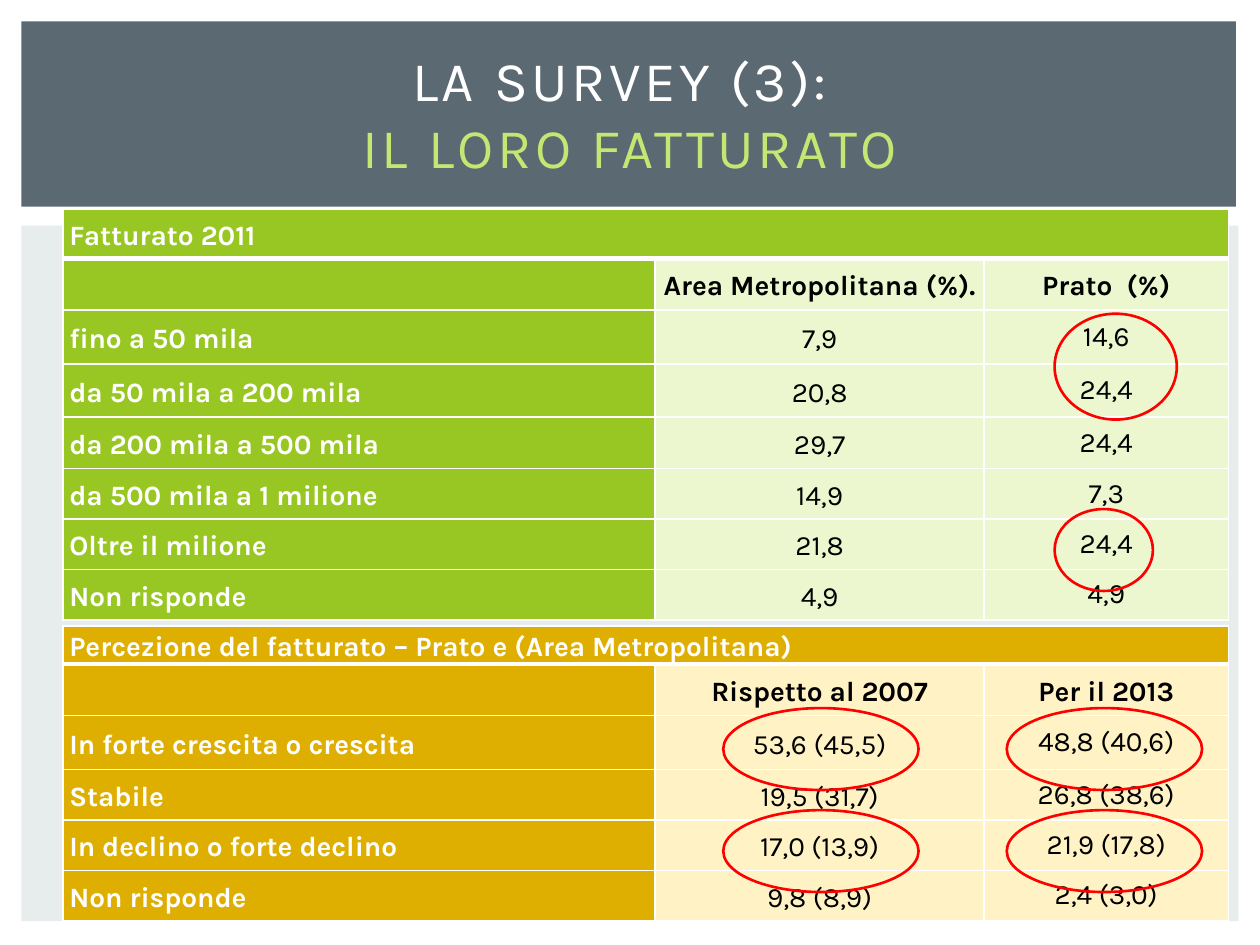
"""Build the survey slide with two turnover tables and highlighted figures."""
from lxml.etree import SubElement
from pptx import Presentation
from pptx.dml.color import RGBColor
from pptx.enum.shapes import MSO_SHAPE as Preset
from pptx.enum.text import MSO_ANCHOR as Anchor, PP_ALIGN as Align
from pptx.oxml.ns import qn
from pptx.util import Inches, Pt

FONT = "Karla"
WHITE, BLACK, RED = "FFFFFF", "000000", "FF0000"
COLUMN_WIDTHS = [4.7, 2.61, 1.94]


def color(value):
    return RGBColor.from_string(value)


def add_run(paragraph, text, size, text_color, bold=False):
    run = paragraph.add_run()
    run.text = text
    run.font.name = FONT
    run.font.size = Pt(size)
    run.font.bold = bold
    run.font.color.rgb = color(text_color)
    return run


presentation = Presentation()
presentation.slide_width = Inches(10)
presentation.slide_height = Inches(7.5)
slide = presentation.slides.add_slide(presentation.slide_layouts[5])
shapes = slide.shapes

panels = [
    (0.17, 1.79, 9.66, 5.52, "E7ECED"),
    (0.17, 0.17, 9.64, 1.47, "5B6973"),
]
for left, top, width, height, fill in panels:
    panel = shapes.add_shape(Preset.RECTANGLE, Inches(left), Inches(top), Inches(width), Inches(height))
    panel.shadow.inherit = False
    panel.fill.solid()
    panel.fill.fore_color.rgb = color(fill)
    panel.line.fill.background()

title = shapes.title
title.left, title.top, title.width, title.height = Inches(0.5), Inches(0.3), Inches(9), Inches(1.19)
title.element.getparent().append(title.element)
title.text_frame.vertical_anchor = Anchor.MIDDLE
title.text_frame.word_wrap = True
title_paragraph = title.text_frame.paragraphs[0]
title_paragraph.alignment = Align.CENTER
first_line = add_run(title_paragraph, "LA SURVEY (3): ", 32, WHITE)
title_paragraph.add_line_break()
second_line = add_run(title_paragraph, "IL LORO FATTURATO", 32, "C5E672")
for run in (first_line, second_line):
    run.font._element.set("spc", "200")

turnover = [
    ["Fatturato 2011", "", ""],
    ["", "Area Metropolitana (%).", "Prato  (%)"],
    ["fino a 50 mila", "7,9", "14,6"],
    ["da 50 mila a 200 mila", "20,8", "24,4"],
    ["da 200 mila a 500 mila", "29,7", "24,4"],
    ["da 500 mila a 1 milione", "14,9", "7,3"],
    ["Oltre il milione", "21,8", "24,4"],
    ["Non risponde", "4,9", "4,9"],
]
perception = [
    ["Percezione del fatturato – Prato e (Area Metropolitana)", "", ""],
    ["", "Rispetto al 2007", "Per il 2013"],
    ["In forte crescita o crescita", "53,6 (45,5)", "48,8 (40,6)"],
    ["Stabile", "19,5 (31,7)", "26,8 (38,6)"],
    ["In declino o forte declino", "17,0 (13,9)", "21,9 (17,8)"],
    ["Non risponde", "9,8 (8,9)", "2,4 (3,0)"],
]
tables = [
    (1.66, turnover, [0.39, 0.41, 0.43, 0.42, 0.41, 0.4, 0.4, 0.4], "98C723", "ECF7D0"),
    (4.97, perception, [0.17, 0.41, 0.43, 0.4, 0.4, 0.4], "DEAE00", "FFF3C5"),
]
for top, rows, row_heights, strong_fill, pale_fill in tables:
    frame = shapes.add_table(
        len(rows), len(COLUMN_WIDTHS), Inches(0.5), Inches(top),
        Inches(sum(COLUMN_WIDTHS)), Inches(sum(row_heights)),
    )
    table = frame.table
    for column, width in zip(table.columns, COLUMN_WIDTHS):
        column.width = Inches(width)
    for row, height in zip(table.rows, row_heights):
        row.height = Inches(height)
    table.cell(0, 0).merge(table.cell(0, 2))

    for row_index, texts in enumerate(rows):
        for column_index, text in enumerate(texts):
            cell = table.cell(row_index, column_index)
            is_label = row_index == 0 or column_index == 0
            cell.margin_left = cell.margin_right = Inches(0.05)
            cell.margin_top = cell.margin_bottom = 0
            cell.vertical_anchor = Anchor.MIDDLE

            properties = cell._tc.get_or_add_tcPr()
            for side in ("lnL", "lnR", "lnT", "lnB"):
                is_thick = (row_index, side) in ((0, "lnB"), (1, "lnT"))
                border = SubElement(properties, qn(f"a:{side}"), w=str(Pt(3 if is_thick else 1)))
                border_fill = SubElement(border, qn("a:solidFill"))
                SubElement(border_fill, qn("a:srgbClr"), val=WHITE)
            cell.fill.solid()
            cell.fill.fore_color.rgb = color(strong_fill if is_label else pale_fill)

            if text:
                paragraph = cell.text_frame.paragraphs[0]
                paragraph.alignment = Align.LEFT if is_label else Align.CENTER
                if row_index < 2 or column_index < 2:
                    paragraph.line_spacing = 1.15
                add_run(paragraph, text, 16, WHITE if is_label else BLACK, is_label or row_index == 1)

highlights = [(8.37, 2.49, 0.97, 0.84), (8.37, 4.04, 0.78, 0.65)]
highlights += [(left, top, 1.55, 0.65) for left in (5.74, 7.99) for top in (5.62, 6.43)]
for left, top, width, height in highlights:
    ellipse = shapes.add_shape(Preset.OVAL, Inches(left), Inches(top), Inches(width), Inches(height))
    ellipse.shadow.inherit = False
    ellipse.fill.background()
    ellipse.line.color.rgb = color(RED)
    ellipse.line.width = Pt(1.5)

presentation.save("out.pptx")
